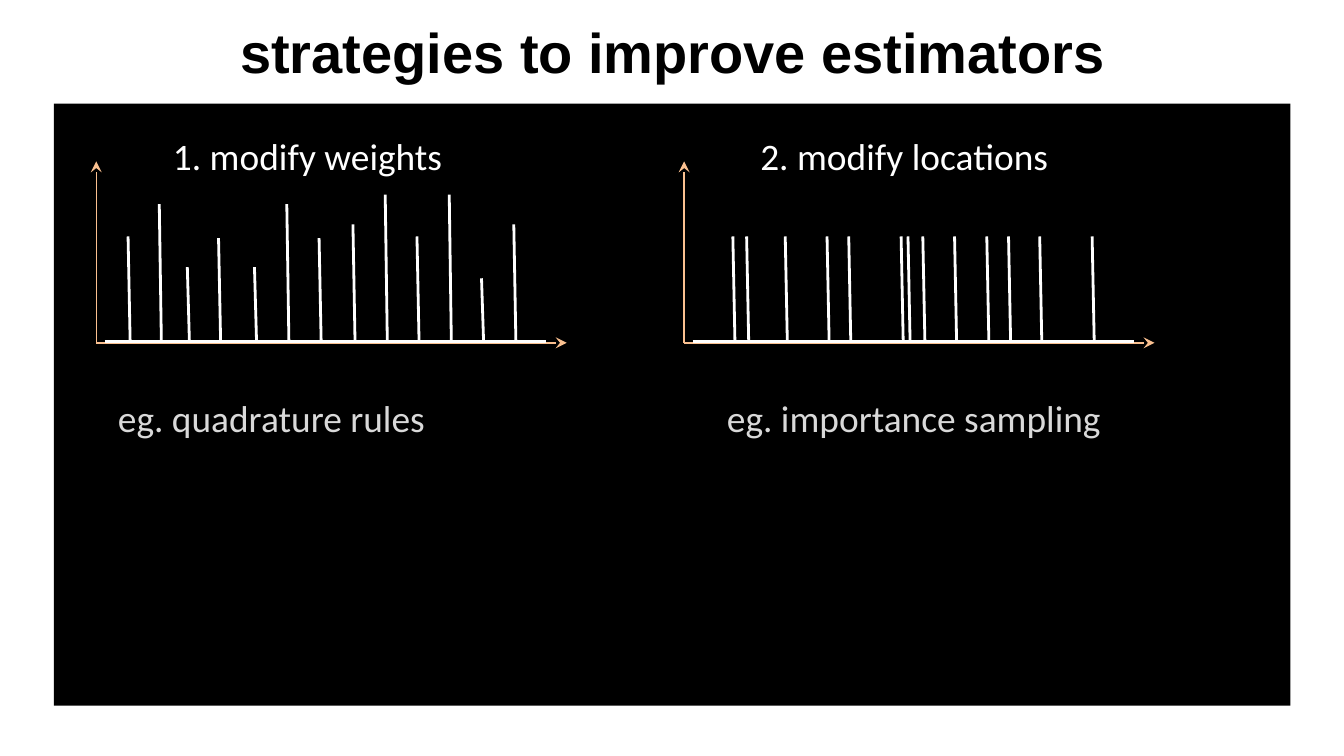
import pptx
import pptx.dml.color
import pptx.enum.shapes
import pptx.enum.text
import pptx.oxml
import pptx.oxml.ns
import pptx.util

Cm = pptx.util.Cm
ANCHOR = pptx.enum.text.MSO_ANCHOR
ALIGN = pptx.enum.text.PP_ALIGN
AUTO = pptx.enum.text.MSO_AUTO_SIZE


def rgb(value):
    return pptx.dml.color.RGBColor.from_string(value)


def set_all(target, values):
    for name, value in values.items():
        setattr(target, name, value)


class Deck:
    BLACK, WHITE, GREY, PEACH = "000000", "FFFFFF", "D9D9D9", "FAC090"
    BASE, AXIS_WIDTH, AXIS_HEIGHT, LEAN = 6.48, 8.89, 3.43, 0.04
    TITLE = {"size": pptx.util.Pt(30), "name": "Arial", "bold": True}
    LABEL = {"size": pptx.util.Pt(20), "name": "Calibri"}

    def __init__(self, width, height):
        self.prs = pptx.Presentation()
        set_all(self.prs, {"slide_width": Cm(width), "slide_height": Cm(height)})

    def add_slide(self):
        self.s = self.prs.slides.add_slide(self.prs.slide_layouts[6])
        self.shapes = self.s.shapes

    def begin_group(self):
        self.shapes = self.s.shapes.add_group_shape().shapes

    def end_group(self):
        self.shapes = self.s.shapes

    def panel(self, x, y, w, h):
        kind = pptx.enum.shapes.MSO_SHAPE.RECTANGLE
        sp = self.shapes.add_shape(kind, Cm(x), Cm(y), Cm(w), Cm(h))
        sp.shadow.inherit = False
        sp.fill.solid()
        sp.fill.fore_color.rgb = rgb(self.BLACK)
        sp.line.fill.background()

    def text(self, text, x, y, w, h, color, font, frame, align=ALIGN.LEFT):
        sp = self.shapes.add_textbox(Cm(x), Cm(y), Cm(w), Cm(h))
        tf = sp.text_frame
        set_all(tf, frame)
        p = tf.paragraphs[0]
        p.alignment = align
        r = p.add_run()
        r.text = text
        set_all(r.font, font)
        r.font.color.rgb = rgb(color)

    def title(self, text):
        frame = {"word_wrap": True, "vertical_anchor": ANCHOR.MIDDLE,
                 "margin_top": Cm(0.1), "margin_bottom": Cm(0.1)}
        self.text(text, 2.01, 0.1, 21.41, 1.73, self.BLACK, self.TITLE,
                  frame, ALIGN.CENTER)

    def label(self, text, x, y, w, color, wrap=False):
        frame = {"word_wrap": wrap, "auto_size": AUTO.SHAPE_TO_FIT_TEXT}
        self.text(text, x, y, w, 1.12, color, self.LABEL, frame)

    def line(self, x1, y1, x2, y2, color, width, arrow=False):
        kind = pptx.enum.shapes.MSO_CONNECTOR.STRAIGHT
        sp = self.shapes.add_connector(kind, Cm(x1), Cm(y1), Cm(x2), Cm(y2))
        sp.line.color.rgb = rgb(color)
        sp.line.width = pptx.util.Pt(width)
        if arrow:
            tail = pptx.oxml.parse_xml(
                f'<a:tailEnd {pptx.oxml.ns.nsdecls("a")} type="stealth"/>')
            sp.line._get_or_add_ln().append(tail)
        effects = pptx.oxml.parse_xml(
            f'<a:effectLst {pptx.oxml.ns.nsdecls("a")}/>')
        sp._element.spPr.append(effects)

    def stem_plot(self, left, stems):
        base = self.BASE
        self.line(left, base, left, base - self.AXIS_HEIGHT, self.PEACH, 0.75, True)
        self.line(left, base, left + self.AXIS_WIDTH, base, self.PEACH, 0.75, True)
        self.line(left + 0.16, base - 0.03, left + 8.5, base - 0.03, self.WHITE, 1.5)
        for offset, height in stems:
            x = left + offset
            self.line(x, base, x - self.LEAN, base - height, self.WHITE, 1.5)


def main():
    weighted = [(0.64, 2.01), (1.23, 2.62), (1.76, 1.43), (2.35, 1.98),
                (3.03, 1.43), (3.64, 2.62), (4.25, 1.98), (4.89, 2.24),
                (5.5, 2.8), (6.1, 2.01), (6.71, 2.8), (7.32, 1.22),
                (7.93, 2.24)]
    locations = [0.96, 1.22, 1.95, 2.74, 3.15, 4.14, 4.27, 4.55, 5.15,
                 5.76, 6.17, 6.76, 7.75]
    relocated = [(offset, 2.01) for offset in locations]

    deck = Deck(25.4, 14.29)
    deck.add_slide()
    deck.panel(1.02, 1.96, 23.37, 11.38)
    deck.title("strategies to improve estimators")

    deck.begin_group()
    deck.stem_plot(1.82, weighted)
    deck.label("1. modify weights", 3.02, 2.39, 5.64, deck.WHITE)

    deck.begin_group()
    deck.label("eg. importance sampling", 13.49, 7.34, 7.65, deck.GREY)
    deck.stem_plot(12.93, relocated)
    deck.label("2. modify locations", 14.12, 2.39, 5.99, deck.WHITE)

    deck.end_group()
    deck.label("eg. quadrature rules", 1.98, 7.34, 8.33, deck.GREY, wrap=True)
    deck.prs.save("out.pptx")


if __name__ == "__main__":
    main()
